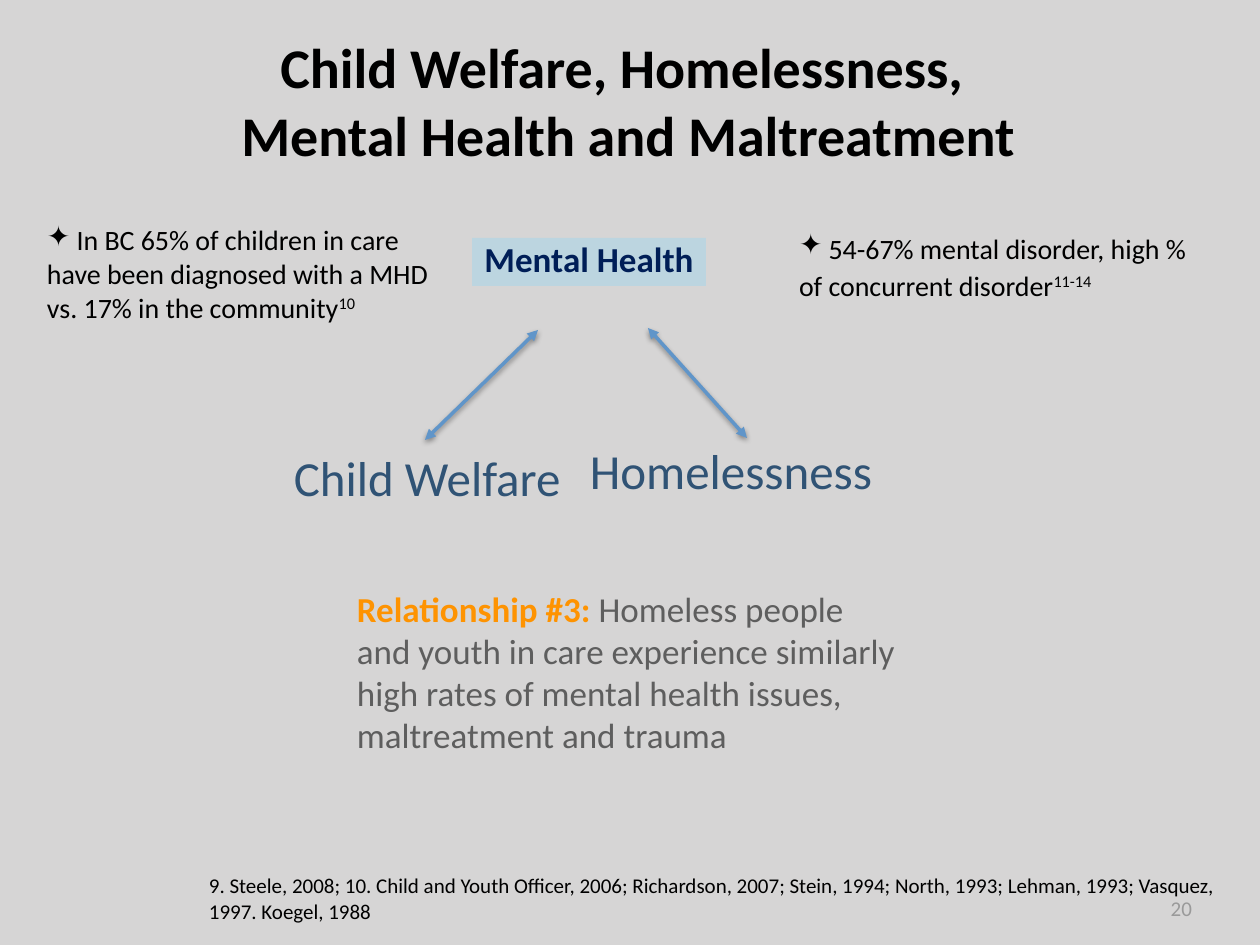
from lxml.etree import SubElement
from pptx import Presentation
from pptx.dml.color import RGBColor
from pptx.enum.shapes import MSO_CONNECTOR, MSO_SHAPE
from pptx.enum.text import MSO_ANCHOR, PP_ALIGN
from pptx.oxml import parse_xml
from pptx.oxml.ns import nsdecls, qn
from pptx.util import Pt

PX = 914400 / 126  # EMU per px
BLACK = RGBColor(0x00, 0x00, 0x00)
BACKGROUND = RGBColor(0xD6, 0xD5, 0xD5)
ARROW_BLUE = RGBColor(0x60, 0x95, 0xC9)
TOPIC_BLUE = RGBColor(0x30, 0x53, 0x75)
NAVY = RGBColor(0x00, 0x1E, 0x57)
SKY = RGBColor(0x76, 0xD6, 0xFF)
ORANGE = RGBColor(0xFE, 0x93, 0x01)
GREY = RGBColor(0x5E, 0x5E, 0x5E)
PALE_GREY = RGBColor(0x9A, 0x9A, 0x9A)


def px(*lengths):
    return [round(length * PX) for length in lengths]


def write(shape, *paragraphs, size, color=BLACK, bold=False, align=PP_ALIGN.LEFT,
          anchor=MSO_ANCHOR.TOP, inset=0, spacing=None, bullet=None, wrap=True):
    """Each paragraph is a list of (text, overrides) runs."""
    frame = shape.text_frame
    frame.word_wrap = wrap
    frame.vertical_anchor = anchor
    frame.margin_left = frame.margin_top = frame.margin_right = frame.margin_bottom = px(inset)[0]
    for index, runs in enumerate(paragraphs):
        paragraph = frame.add_paragraph() if index else frame.paragraphs[0]
        paragraph.alignment = align
        if spacing:
            paragraph.line_spacing = spacing
        if bullet:
            properties = paragraph._p.get_or_add_pPr()
            properties.set("marL", "0")
            properties.set("indent", "0")
            SubElement(properties, qn("a:buChar")).set("char", bullet)
        for text, overrides in runs:
            run = paragraph.add_run()
            run.text = text
            run.font.name = "Calibri"
            run.font.size = Pt(size)
            run.font.bold = overrides.get("bold", bold)
            run.font.color.rgb = overrides.get("color", color)
            if overrides.get("superscript"):
                run._r.get_or_add_rPr().set("baseline", "32000")


presentation = Presentation()
presentation.slide_width, presentation.slide_height = px(1260, 945)
slide = presentation.slides.add_slide(presentation.slide_layouts[5])
slide.background.fill.solid()
slide.background.fill.fore_color.rgb = BACKGROUND
shapes = slide.shapes

# Title
title = shapes.title
title.left, title.top, title.width, title.height = px(181, 33, 895, 136)
write(title, [("Child Welfare, Homelessness, ", {})], [("Mental Health and Maltreatment", {})],
      size=32, bold=True, align=PP_ALIGN.CENTER)

# Arrows from mental health to the two lower topics
for ends in [(538, 330, 425, 440), (648, 328, 747, 438)]:
    arrow = shapes.add_connector(MSO_CONNECTOR.STRAIGHT, *px(*ends))
    arrow.line.color.rgb = ARROW_BLUE
    arrow.line.width = Pt(2)
    line = arrow.line._get_or_add_ln()
    for end in ("a:headEnd", "a:tailEnd"):
        SubElement(line, qn(end)).set("type", "triangle")
    arrow._element.spPr.append(parse_xml(
        f'<a:effectLst {nsdecls("a")}><a:outerShdw blurRad="38100" dist="20320" dir="5400000" '
        'rotWithShape="0"><a:srgbClr val="000000"><a:alpha val="38000"/></a:srgbClr>'
        '</a:outerShdw></a:effectLst>'))

# Topics
mental_health = shapes.add_shape(MSO_SHAPE.RECTANGLE, *px(472, 238, 234, 48))
mental_health.shadow.inherit = False
mental_health.line.fill.background()
mental_health.fill.solid()
mental_health.fill.fore_color.rgb = SKY
sky_fill = mental_health._element.spPr.find(qn("a:solidFill"))
SubElement(sky_fill[0], qn("a:alpha")).set("val", "27000")
write(mental_health, [("Mental Health", {})], size=20, color=NAVY, bold=True,
      align=PP_ALIGN.CENTER)

for topic, place, inset, spacing in [("Child Welfare", (289, 442, 300, 79), 5, None),
                                     ("Homelessness", (590, 447, 300, 66), 0, 0.9)]:
    write(shapes.add_textbox(*px(*place)), [(topic, {})], size=28, color=TOPIC_BLUE,
          inset=inset, spacing=spacing)

# Findings on either side
for finding, references, place, spacing in [
    (" In BC 65% of children in care have been diagnosed with a MHD vs. 17% in the community",
     "10", (47, 223, 411, 100), None),
    (" 54-67% mental disorder, high % of concurrent disorder",
     "11-14", (799, 228, 397, 71), 1.1),
]:
    write(shapes.add_textbox(*px(*place)), [(finding, {}), (references, {"superscript": True})],
          size=16, spacing=spacing, bullet="✦")

# Relationship statement
relationship = shapes.add_textbox(*px(349, 581, 558, 181))
write(relationship,
      [("Relationship #3: ", {"color": ORANGE, "bold": True}),
       ("Homeless people and youth in care experience similarly high rates of "
        "mental health issues, maltreatment and trauma", {})],
      size=20, color=GREY, anchor=MSO_ANCHOR.MIDDLE, inset=8)

# Sources and slide number
sources = shapes.add_textbox(*px(209, 873, 1031, 49))
write(sources, [("9. Steele, 2008; 10. Child and Youth Officer, 2006; Richardson, 2007; "
                 "Stein, 1994; North, 1993; Lehman, 1993; Vasquez, 1997. Koegel, 1988", {})],
      size=12)
page_number = shapes.add_textbox(*px(1163, 891, 34, 35))
write(page_number, [("20", {})], size=12, color=PALE_GREY, align=PP_ALIGN.RIGHT,
      anchor=MSO_ANCHOR.BOTTOM, inset=5, wrap=False)

presentation.save("out.pptx")
